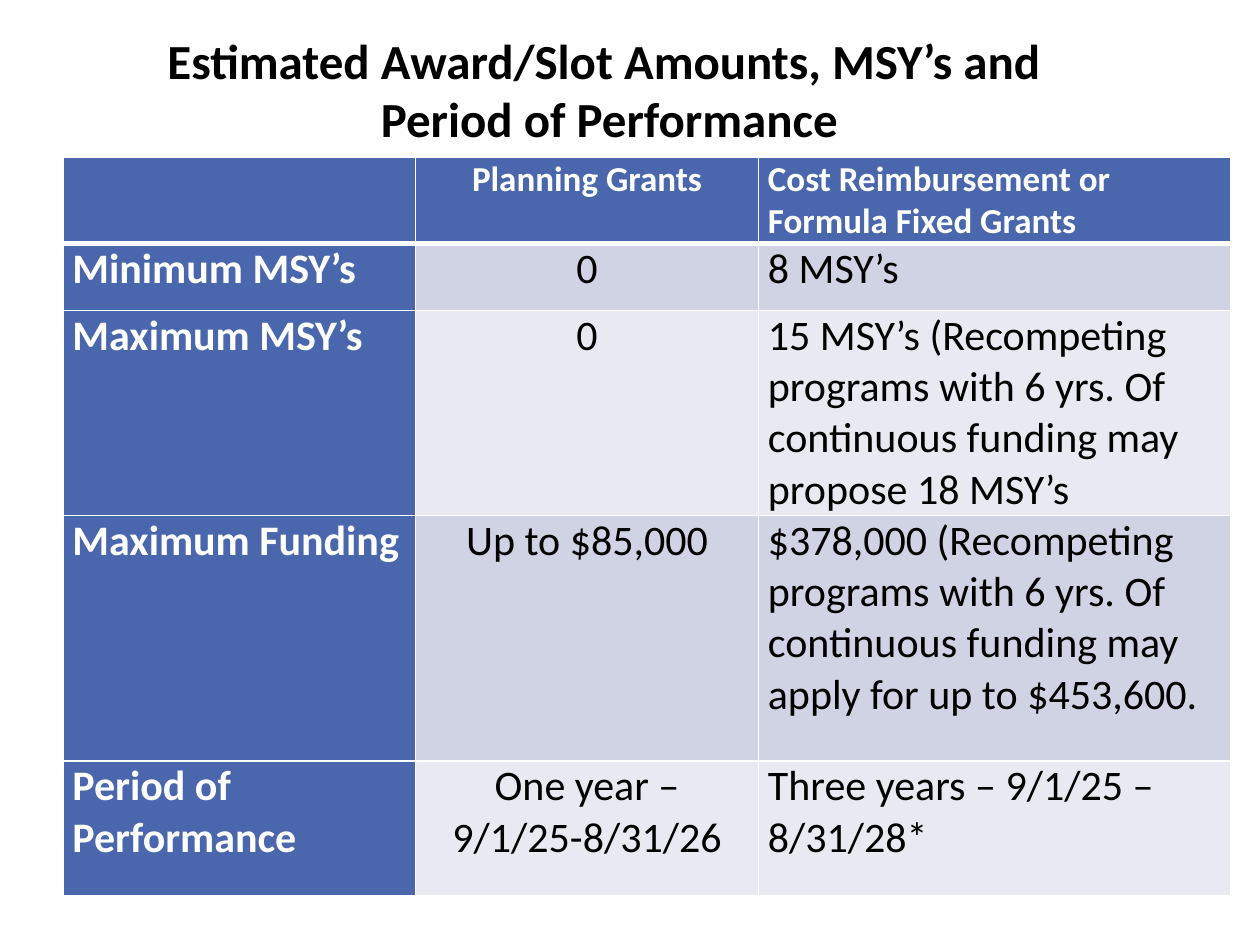
from dataclasses import dataclass

from lxml.etree import SubElement
from pptx import Presentation
from pptx.dml.color import RGBColor
from pptx.enum.text import MSO_ANCHOR as Anchor, MSO_AUTO_SIZE as AutoSize, PP_ALIGN as Align
from pptx.oxml.ns import qn
from pptx.util import Cm, Pt

FONT = "Calibri"
BLACK, WHITE, BLUE = "000000", "FFFFFF", "4A66AC"
BANDS = ("D0D3E3", "E9EAF1")
COLUMN_WIDTHS = (7.11, 6.91, 9.53)
TITLE_LINES = ("Estimated Award/Slot Amounts, MSY’s and", " Period of Performance")


@dataclass
class GrantRow:
    height: float
    label: str
    planning: str
    operating: str


ROWS = (
    GrantRow(1.65, "", "Planning Grants", "Cost Reimbursement or Formula Fixed Grants"),
    GrantRow(1.35, "Minimum MSY’s", "0", "8 MSY’s"),
    GrantRow(3.96, "Maximum MSY’s", "0",
             "15 MSY’s (Recompeting programs with 6 yrs. Of continuous funding may propose 18 MSY’s"),
    GrantRow(4.95, "Maximum Funding", "Up to $85,000",
             "$378,000 (Recompeting programs with 6 yrs. Of continuous funding may apply for up to $453,600."),
    GrantRow(2.72, "Period of Performance", "One year – 9/1/25-8/31/26",
             "Three years – 9/1/25 – 8/31/28*"),
)


def color(hex_code: str) -> RGBColor:
    return RGBColor.from_string(hex_code)


def write(paragraph, text: str, size: int, font_color: str, bold: bool, align) -> None:
    paragraph.alignment = align
    run = paragraph.add_run()
    run.text = text
    run.font.name = FONT
    run.font.size = Pt(size)
    run.font.bold = bold
    run.font.color.rgb = color(font_color)


def add_borders(cell, is_header: bool) -> None:
    """Draw white cell borders; call before setting the fill, as the schema wants lines first."""
    widths = {"a:lnL": 1, "a:lnR": 1}
    if is_header:
        widths["a:lnT"] = 1
    widths["a:lnB"] = 3 if is_header else 1
    properties = cell._tc.get_or_add_tcPr()
    for tag, width in widths.items():
        line = SubElement(properties, qn(tag), w=str(Pt(width)))
        fill = SubElement(line, qn("a:solidFill"))
        SubElement(fill, qn("a:srgbClr"), val=WHITE)


def add_title(slide) -> None:
    title = slide.shapes.title
    title.left, title.top, title.width, title.height = Cm(1.27), Cm(0.48), Cm(21.8), Cm(3.84)
    frame = title.text_frame
    frame.word_wrap = True
    frame.auto_size = AutoSize.NONE
    frame.vertical_anchor = Anchor.TOP
    for index, line in enumerate(TITLE_LINES):
        paragraph = frame.add_paragraph() if index else frame.paragraphs[0]
        write(paragraph, line, 28, BLACK, True, Align.CENTER)


def fill_cell(cell, text: str, row: int, column: int) -> None:
    is_header = row == 0
    is_heading = is_header or column == 0
    cell.margin_left = cell.margin_right = Cm(0.19)
    cell.margin_top = cell.margin_bottom = 0
    add_borders(cell, is_header)
    cell.fill.solid()
    cell.fill.fore_color.rgb = color(BLUE if is_heading else BANDS[(row - 1) % 2])
    if text:
        write(cell.text_frame.paragraphs[0], text, 20 if is_header else 24,
              WHITE if is_heading else BLACK, is_heading,
              Align.CENTER if column == 1 else Align.LEFT)


def add_grant_table(slide) -> None:
    table = slide.shapes.add_table(
        len(ROWS), len(COLUMN_WIDTHS), Cm(1.27), Cm(3.18),
        Cm(sum(COLUMN_WIDTHS)), Cm(sum(row.height for row in ROWS))).table
    for column, width in zip(table.columns, COLUMN_WIDTHS):
        column.width = Cm(width)
    for row_index, row in enumerate(ROWS):
        table.rows[row_index].height = Cm(row.height)
        for column_index, text in enumerate((row.label, row.planning, row.operating)):
            fill_cell(table.cell(row_index, column_index), text, row_index, column_index)


def main() -> None:
    presentation = Presentation()
    presentation.slide_width, presentation.slide_height = Cm(25.4), Cm(19.05)
    slide = presentation.slides.add_slide(presentation.slide_layouts[5])
    add_title(slide)
    add_grant_table(slide)
    presentation.save("out.pptx")


if __name__ == "__main__":
    main()
